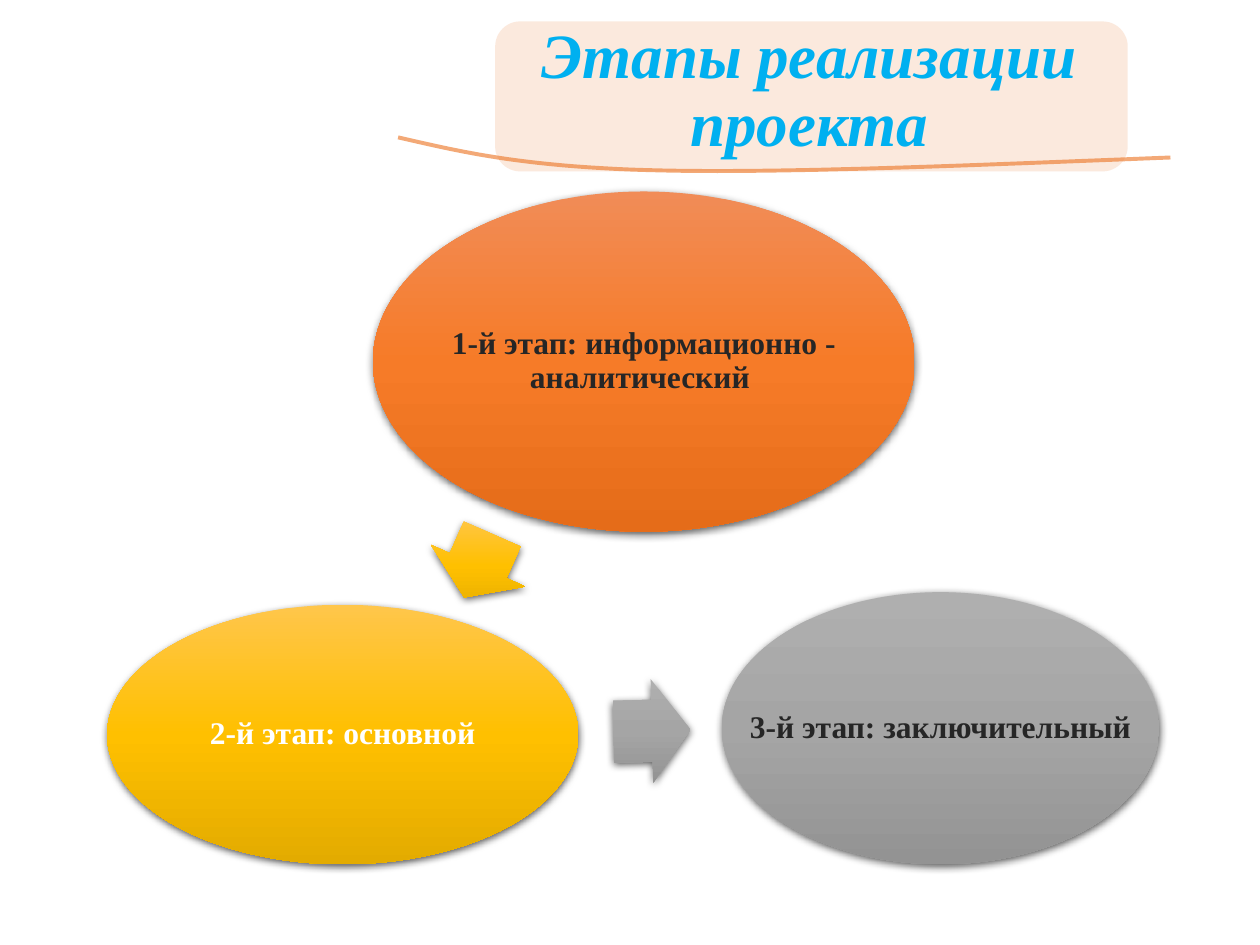
from lxml import etree
from pptx import Presentation
from pptx.dml.color import RGBColor
from pptx.enum.shapes import MSO_SHAPE
from pptx.enum.text import MSO_ANCHOR, PP_ALIGN
from pptx.oxml import parse_xml
from pptx.util import Inches, Pt

OVAL, ARROW, ROUNDED = MSO_SHAPE.OVAL, MSO_SHAPE.RIGHT_ARROW, MSO_SHAPE.ROUNDED_RECTANGLE
MIDDLE, CENTER = MSO_ANCHOR.MIDDLE, PP_ALIGN.CENTER
NS = "http://schemas.openxmlformats.org/drawingml/2006/main"
FONT = "Times New Roman"
COLORS = {"title": "00B0F0", "panel": "FBE5D6", "swoosh": "ED7D31",
          "dark": "262626", "white": "FFFFFF"}
GRADIENTS = {"orange": ("F18C57", "F67B28", "E56C19"),
             "gray": ("AFAFAF", "A5A5A5", "939393"),
             "gold": ("FFC64B", "FFC000", "E3AB00")}

prs = Presentation()
prs.slide_width, prs.slide_height = Inches(10), Inches(7.5)
slide = prs.slides.add_slide(prs.slide_layouts[6])


def add_label(box, text, size, color, inset, italic=None):
    label = slide.shapes.add_textbox(*map(Inches, box))
    frame = label.text_frame
    frame.word_wrap = True
    frame.vertical_anchor = MIDDLE
    frame.margin_left = frame.margin_right = Inches(inset)
    frame.margin_top = frame.margin_bottom = Inches(0.03)
    line = frame.paragraphs[0]
    line.text = text
    line.alignment = CENTER
    line.line_spacing = 0.9
    line.font.name, line.font.size = FONT, Pt(size)
    line.font.bold, line.font.italic = True, italic
    line.font.color.rgb = RGBColor.from_string(COLORS[color])


def add_glossy(kind, box, gradient, rotation=0):
    shape = slide.shapes.add_shape(kind, *map(Inches, box))
    shape.rotation = rotation
    shape.line.fill.background()
    stops = "".join(f'<a:gs pos="{i * 50000}"><a:srgbClr val="{color}"/></a:gs>'
                    for i, color in enumerate(GRADIENTS[gradient]))
    props = shape.element.spPr
    props.find(f"{{{NS}}}prstGeom").addnext(parse_xml(
        f'<a:gradFill xmlns:a="{NS}" rotWithShape="0"><a:gsLst>{stops}</a:gsLst>'
        '<a:lin ang="5400000" scaled="0"/></a:gradFill>'))
    props.append(parse_xml(
        f'<a:effectLst xmlns:a="{NS}"><a:outerShdw blurRad="{Pt(4.5)}" dist="{Pt(1.5)}" '
        'dir="5400000" algn="ctr" rotWithShape="0"><a:srgbClr val="000000">'
        '<a:alpha val="63000"/></a:srgbClr></a:outerShdw></a:effectLst>'))
    return shape


# Title panel
panel = slide.shapes.add_shape(ROUNDED, Inches(3.93), Inches(0.17), Inches(5.02), Inches(1.19))
panel.shadow.inherit = False
panel.fill.solid()
panel.fill.fore_color.rgb = RGBColor.from_string(COLORS["panel"])
panel.line.fill.background()

# Swoosh under the title: two joined Bezier curves
curves = [((9.29, 1.25), (7.73, 1.31), (6.16, 1.38), (5.14, 1.35)),
          ((5.14, 1.35), (4.12, 1.32), (3.64, 1.2), (3.16, 1.09))]
STEPS = 24
points = []
for curve in curves:
    for step in range(1, STEPS + 1):
        t = step / STEPS
        weights = ((1 - t) ** 3, 3 * t * (1 - t) ** 2, 3 * t ** 2 * (1 - t), t ** 3)
        points.append(tuple(Inches(sum(w * p[axis] for w, p in zip(weights, curve)))
                            for axis in (0, 1)))
start_x, start_y = curves[0][0]
builder = slide.shapes.build_freeform(Inches(start_x), Inches(start_y))
builder.add_line_segments(points, close=False)
swoosh = builder.convert_to_shape()
swoosh.shadow.inherit = False
swoosh.fill.background()
swoosh.line.width = Pt(2.25)
swoosh.line.color.rgb = RGBColor.from_string(COLORS["swoosh"])

# Transparency of panel and swoosh
for part, alpha in ((panel.element.spPr, 81), (swoosh.line._ln, 66)):
    color = part.find(f"{{{NS}}}solidFill/{{{NS}}}srgbClr")
    etree.SubElement(color, f"{{{NS}}}alpha", val=str(alpha * 1000))

# Stages
stages = [((2.96, 1.52, 4.3, 2.7), "orange", "1-й этап: информационно - аналитический ", "dark"),
          ((5.73, 4.7, 3.47, 2.16), "gray", "3-й этап: заключительный", "dark"),
          ((0.85, 4.8, 3.74, 2.06), "gold", "2-й этап: основной", "white")]
for box, gradient, text, color in stages:
    add_glossy(OVAL, box, gradient)
    add_label(box, text, 18, color, 0.03)

# Arrows between stages
for box, gradient, rotation in [((3.52, 4.08, 0.55, 0.82), "gold", 113.8),
                                ((4.87, 5.39, 0.61, 0.82), "gray", 358.5)]:
    arrow = add_glossy(ARROW, box, gradient, rotation)
    arrow.adjustments[0], arrow.adjustments[1] = 0.6, 0.5

# Title
add_label((3.56, 0.31, 5.72, 0.84), "Этапы реализации проекта", 36, "title", 0.1, italic=True)

prs.save("out.pptx")
